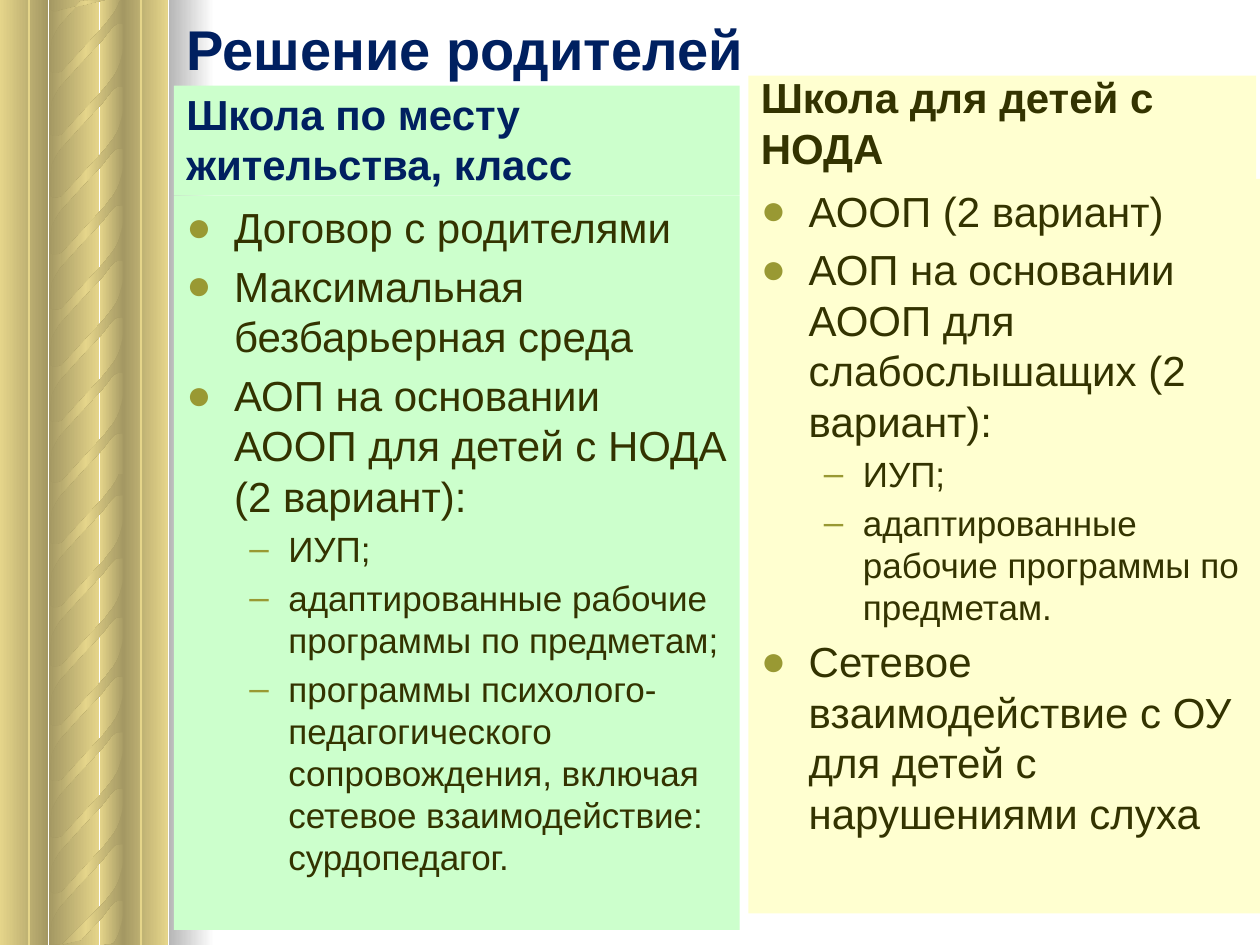
"""Builds a slide that compares two school options beside a golden rope column."""
from copy import deepcopy
from typing import NamedTuple

from lxml.etree import SubElement
from pptx import Presentation
from pptx.dml.color import RGBColor
from pptx.enum.shapes import MSO_CONNECTOR, MSO_SHAPE
from pptx.enum.text import MSO_ANCHOR, MSO_AUTO_SIZE, PP_ALIGN
from pptx.oxml.ns import qn
from pptx.util import Inches, Pt

WIDTH, HEIGHT = Inches(10), Inches(7.5)
COLUMN, ROW = WIDTH / 100, HEIGHT / 75
LIGHT, DARK = "E5D58A", "A49863"
NAVY, OLIVE, BULLET = "002060", "333300", "999933"


class Box(NamedTuple):
    left: float
    top: float
    width: float
    height: float


class Level(NamedTuple):
    size: int
    margin: float
    hanging: float
    bullet: str


class Panel(NamedTuple):
    fill: str
    heading: str
    heading_color: str
    heading_box: Box
    body_box: Box
    items: list[tuple[int, str]]


class Strip(NamedTuple):
    left: float
    width: float
    colors: tuple[str, str]


class RopeHalf(NamedTuple):
    top: float
    height: float
    strand_tops: list[float]


LEVELS = [Level(24, 3.8, 3.8, "●"), Level(20, 8.1, 3.1, "–")]
STRIPS = [
    Strip(7.9, 2, (LIGHT, DARK)),
    Strip(0, 3.8, (LIGHT, DARK)),
    Strip(3.9, 4, (DARK, LIGHT)),
    Strip(9.8, 3.5, (DARK, LIGHT)),
]
ROPE_HALVES = [
    RopeHalf(37.3, 37.7, [45.8, 50.5, 54.9, 59.4, 63.8, 68.3, 41.1, 36.1]),
    RopeHalf(0, 37.6, [8.6, 13.1, 17.5, 22, 26.4, 72.5, 3.7, -1.3, -6.2, 31.2]),
]
STRAND = [
    (9.8, 0.9), (9.8, 3.3), (9.7, 3.2), (9.3, 3.2), (9.1, 3.3), (8.8, 3.6),
    (8.1, 4.5), (6.4, 6.3), (4.7, 8.2), (4.4, 8.7), (4.1, 9.3), (4, 10.1),
    (3.9, 11.2), (3.9, 6.3), (3.9, 6.8), (4, 7), (4.2, 7.1), (4.4, 7.1),
    (4.6, 7.1), (4.9, 7), (8.3, 3.3), (9, 2.4), (9.3, 1.9), (9.5, 1.4),
    (9.7, 0.6), (9.8, 0), (9.8, 2),
]
PANELS = [
    Panel(
        "CCFFCC", "Школа по месту жительства, класс", NAVY,
        Box(13.8, 6.8, 44.9, 8.7), Box(13.8, 15.5, 44.9, 58.3),
        [
            (0, "Договор с родителями"),
            (0, "Максимальная безбарьерная среда"),
            (0, "АОП на основании АООП для детей с НОДА (2 вариант):"),
            (1, "ИУП;"),
            (1, "адаптированные рабочие программы по предметам;"),
            (1, "программы психолого-педагогического сопровождения, "
                "включая сетевое взаимодействие: сурдопедагог."),
        ],
    ),
    Panel(
        "FFFFD0", "Школа для детей с НОДА", OLIVE,
        Box(59.4, 6, 40.3, 8.2), Box(59.4, 14.2, 40.6, 58.3),
        [
            (0, "АООП (2 вариант)"),
            (0, "АОП на основании АООП для слабослышащих (2 вариант):"),
            (1, "ИУП;"),
            (1, "адаптированные рабочие программы по предметам."),
            (0, "Сетевое взаимодействие с ОУ для детей с нарушениями слуха"),
        ],
    ),
]


def rgb(color: str) -> RGBColor:
    """Turn a hex string into a colour."""
    return RGBColor.from_string(color)


def place(box: Box) -> tuple[int, ...]:
    """Convert grid cells to slide lengths."""
    return tuple(round(cells * unit) for cells, unit in zip(box, (COLUMN, ROW) * 2))


def paint_gradient(shape, colors: tuple[str, ...]) -> None:
    """Give a shape a plain left-to-right gradient of evenly spaced stops."""
    shape.shadow.inherit = False
    shape.line.fill.background()
    shape.fill.gradient()
    shape.fill.gradient_angle = 0
    stop_list = shape._element.spPr.find(".//" + qn("a:gsLst"))
    while len(stop_list) < len(colors):
        stop_list.append(deepcopy(stop_list[-1]))
    for index, (stop, color) in enumerate(zip(shape.fill.gradient_stops, colors)):
        stop.position = index / (len(colors) - 1)
        stop.color.rgb = rgb(color)


def add_strip(slide, box: Box, colors: tuple[str, str]) -> None:
    """Draw one shaded upright strip."""
    paint_gradient(slide.shapes.add_shape(MSO_SHAPE.RECTANGLE, *place(box)), colors)


def add_strand(slide, top: float, limit: float) -> None:
    """Draw one rope strand, cut at its half's top and the slide's bottom."""
    points = [
        (round(x * COLUMN), round(min(max(top + y, limit), 75) * ROW)) for x, y in STRAND
    ]
    builder = slide.shapes.build_freeform(*points[0])
    builder.add_line_segments(points[1:])
    paint_gradient(builder.convert_to_shape(), (DARK, LIGHT, DARK))


def add_groove(slide, column: float) -> None:
    """Draw a thin light line down the column."""
    x = round(column * COLUMN)
    connector = slide.shapes.add_connector(MSO_CONNECTOR.STRAIGHT, x, 0, x, HEIGHT)
    connector.line.color.rgb = rgb(LIGHT)
    connector.line.width = Pt(1)
    SubElement(connector._element.spPr, qn("a:effectLst"))


def format_frame(frame, anchor: MSO_ANCHOR) -> None:
    """Set wrapping, fixed size and anchor of a text frame."""
    values = {"word_wrap": True, "auto_size": MSO_AUTO_SIZE.NONE, "vertical_anchor": anchor}
    for name, value in values.items():
        setattr(frame, name, value)


def write(paragraph, text: str, size: int, color: str, bold: bool = False) -> None:
    """Put one formatted run into a left-aligned paragraph."""
    paragraph.alignment = PP_ALIGN.LEFT
    run = paragraph.add_run()
    run.text = text
    for name, value in {"name": "Arial", "size": Pt(size), "bold": bold}.items():
        setattr(run.font, name, value)
    run.font.color.rgb = rgb(color)


def add_bullet(paragraph, level: Level) -> None:
    """Add a coloured bullet and a hanging indent."""
    properties = paragraph._p.get_or_add_pPr()
    properties.set("marL", str(round(level.margin * COLUMN)))
    properties.set("indent", str(round(-level.hanging * COLUMN)))
    SubElement(SubElement(properties, qn("a:buClr")), qn("a:srgbClr"), val=BULLET)
    SubElement(properties, qn("a:buFont"), typeface="Arial")
    SubElement(properties, qn("a:buChar"), char=level.bullet)


def add_block(slide, box: Box, fill: str, anchor: MSO_ANCHOR):
    """Draw a filled rectangle and return its text frame."""
    shape = slide.shapes.add_shape(MSO_SHAPE.RECTANGLE, *place(box))
    shape.shadow.inherit = False
    shape.fill.solid()
    shape.fill.fore_color.rgb = rgb(fill)
    shape.line.fill.background()
    format_frame(shape.text_frame, anchor)
    return shape.text_frame


def add_panel(slide, panel: Panel) -> None:
    """Draw a heading block and its bulleted list."""
    heading = add_block(slide, panel.heading_box, panel.fill, MSO_ANCHOR.BOTTOM).paragraphs[0]
    heading.space_before = Pt(4.8)
    write(heading, panel.heading, 24, panel.heading_color, True)
    frame = add_block(slide, panel.body_box, panel.fill, MSO_ANCHOR.TOP)
    for index, (depth, text) in enumerate(panel.items):
        paragraph = frame.add_paragraph() if index else frame.paragraphs[0]
        level = LEVELS[depth]
        paragraph.level = depth
        paragraph.space_before = Pt(level.size * 0.2)
        add_bullet(paragraph, level)
        write(paragraph, text, level.size, OLIVE)


def add_title(slide, text: str) -> None:
    """Place the title in front of the column."""
    title = slide.shapes.title
    title.left, title.top, title.width, title.height = place(Box(13.8, 0.8, 86.2, 6))
    format_frame(title.text_frame, MSO_ANCHOR.MIDDLE)
    write(title.text_frame.paragraphs[0], text, 32, NAVY, True)
    slide.shapes._spTree.append(title._element)


def main() -> None:
    """Build and save the presentation."""
    presentation = Presentation()
    presentation.slide_width, presentation.slide_height = WIDTH, HEIGHT
    slide = presentation.slides.add_slide(presentation.slide_layouts[5])
    for half in ROPE_HALVES:
        for strip in STRIPS:
            add_strip(slide, Box(strip.left, half.top, strip.width, half.height), strip.colors)
        for top in half.strand_tops:
            add_strand(slide, top, half.top)
    add_strip(slide, Box(13.4, 0, 3.6, 75), ("B6B6B6", "FFFFFF"))
    for column in (2.3, 11.2):
        add_groove(slide, column)
    add_title(slide, "Решение родителей")
    for panel in PANELS:
        add_panel(slide, panel)
    presentation.save("out.pptx")


if __name__ == "__main__":
    main()
